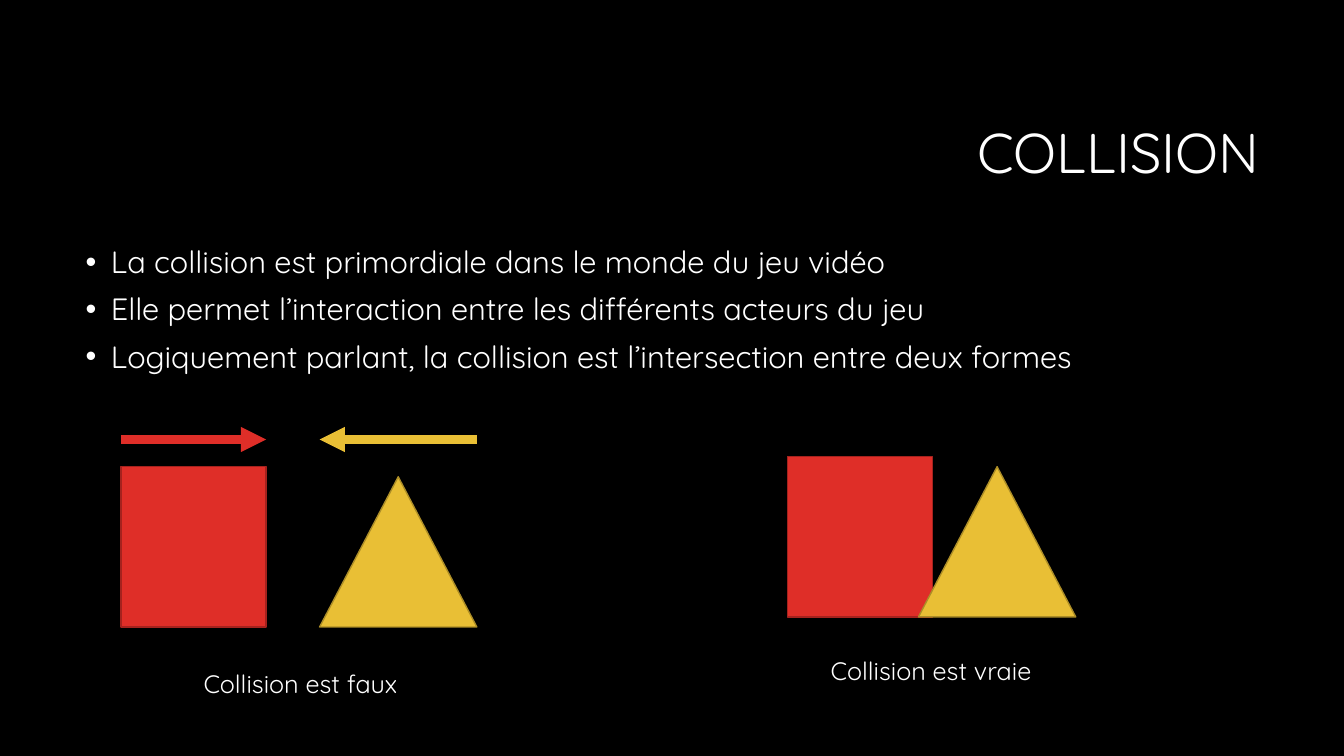
from dataclasses import dataclass

from lxml.etree import SubElement
from pptx import Presentation
from pptx.dml.color import RGBColor
from pptx.enum.shapes import MSO_CONNECTOR, MSO_SHAPE
from pptx.enum.text import MSO_ANCHOR, MSO_AUTO_SIZE, PP_ALIGN
from pptx.oxml.ns import qn
from pptx.slide import Slide
from pptx.util import Inches, Pt

HUES = {
    "back": "000000",
    "text": "FFFFFF",
    "red": "DF2E28",
    "red edge": "A5221E",
    "gold": "E9BF35",
    "gold edge": "AC8D27",
}
FACE = "Quicksand"


@dataclass
class Form:
    kind: MSO_SHAPE
    hue: str
    left: float
    top: float
    wide: float
    high: float


@dataclass
class Arrow:
    hue: str
    start: float
    end: float
    level: float = 4.36


@dataclass
class Label:
    text: str
    left: float
    top: float
    wide: float


def box(hue: str, left: float, top: float) -> Form:
    return Form(MSO_SHAPE.RECTANGLE, hue, left, top, 1.44, 1.59)


def peak(hue: str, left: float, top: float) -> Form:
    return Form(MSO_SHAPE.ISOSCELES_TRIANGLE, hue, left, top, 1.56, 1.49)


FORMS = [
    box("red", 1.2, 4.63),
    peak("gold", 3.17, 4.73),
    box("red", 7.81, 4.53),
    peak("gold", 9.11, 4.63),
]
ARROWS = [Arrow("red", 1.2, 2.64), Arrow("gold", 4.73, 3.17)]
LABELS = [
    Label("Collision est faux", 1.92, 6.58, 2.21),
    Label("Collision est vraie", 8.14, 6.45, 2.28),
]
POINTS = [
    "La collision est primordiale dans le monde du jeu vidéo",
    "Elle permet l’interaction entre les différents acteurs du jeu",
    "Logiquement parlant, la collision est l’intersection entre deux formes",
]


def color(name: str) -> RGBColor:
    return RGBColor.from_string(HUES[name])


def apply(item, values: dict) -> None:
    for name, value in values.items():
        setattr(item, name, value)


def place(item, left: float, top: float, wide: float, high: float) -> None:
    spots = {"left": left, "top": top, "width": wide, "height": high}
    apply(item, {name: Inches(value) for name, value in spots.items()})


def style(para, size: int, **extra) -> None:
    apply(para, extra)
    apply(para.font, {"name": FACE, "size": Pt(size)})
    para.font.color.rgb = color("text")


def bullet(para) -> None:
    props = para._p.get_or_add_pPr()
    props.set("marL", str(Inches(0.25)))
    props.set("indent", str(-Inches(0.25)))
    SubElement(props, qn("a:buFont")).set("typeface", "Arial")
    SubElement(props, qn("a:buChar")).set("char", "•")


def add_form(slide: Slide, form: Form) -> None:
    spot = map(Inches, (form.left, form.top, form.wide, form.high))
    shape = slide.shapes.add_shape(form.kind, *spot)
    shape.shadow.inherit = False
    shape.fill.solid()
    shape.fill.fore_color.rgb = color(form.hue)
    shape.line.color.rgb = color(f"{form.hue} edge")
    shape.line.width = Pt(1)


def add_arrow(slide: Slide, arrow: Arrow) -> None:
    ends = map(Inches, (arrow.start, arrow.level, arrow.end, arrow.level))
    link = slide.shapes.add_connector(MSO_CONNECTOR.STRAIGHT, *ends)
    link.line.color.rgb = color(arrow.hue)
    link.line.width = Pt(6)
    SubElement(link.line._get_or_add_ln(), qn("a:tailEnd")).set("type", "triangle")
    SubElement(link._element.spPr, qn("a:effectLst"))


def add_label(slide: Slide, label: Label) -> None:
    spot = map(Inches, (label.left, label.top, label.wide, 0.4))
    frame = slide.shapes.add_textbox(*spot).text_frame
    frame.text = label.text
    apply(frame, {"word_wrap": False, "auto_size": MSO_AUTO_SIZE.SHAPE_TO_FIT_TEXT})
    style(frame.paragraphs[0], 18)


def add_text(slide: Slide) -> None:
    title, body = slide.placeholders
    place(title, 3.17, 0.84, 9.42, 1.41)
    place(body, 0.75, 2.4, 11.83, 4.4)
    title.text_frame.text = "COLLISION"
    body.text_frame.text = "\n".join(POINTS)
    fixed = {"word_wrap": True, "auto_size": MSO_AUTO_SIZE.NONE}
    apply(title.text_frame, {**fixed, "vertical_anchor": MSO_ANCHOR.MIDDLE})
    apply(body.text_frame, {**fixed, "vertical_anchor": MSO_ANCHOR.TOP})
    head = title.text_frame.paragraphs[0]
    style(head, 40, alignment=PP_ALIGN.RIGHT, line_spacing=0.9)
    for rank, para in enumerate(body.text_frame.paragraphs):
        bullet(para)
        gap = Pt(10 if rank else 0)
        style(para, 22, line_spacing=0.9, space_before=gap)


def main() -> None:
    deck = Presentation()
    apply(deck, {"slide_width": Inches(13.33), "slide_height": Inches(7.5)})
    slide = deck.slides.add_slide(deck.slide_layouts[1])
    slide.background.fill.solid()
    slide.background.fill.fore_color.rgb = color("back")
    add_text(slide)
    for form in FORMS:
        add_form(slide, form)
    for arrow in ARROWS:
        add_arrow(slide, arrow)
    for label in LABELS:
        add_label(slide, label)
    deck.save("out.pptx")


if __name__ == "__main__":
    main()
